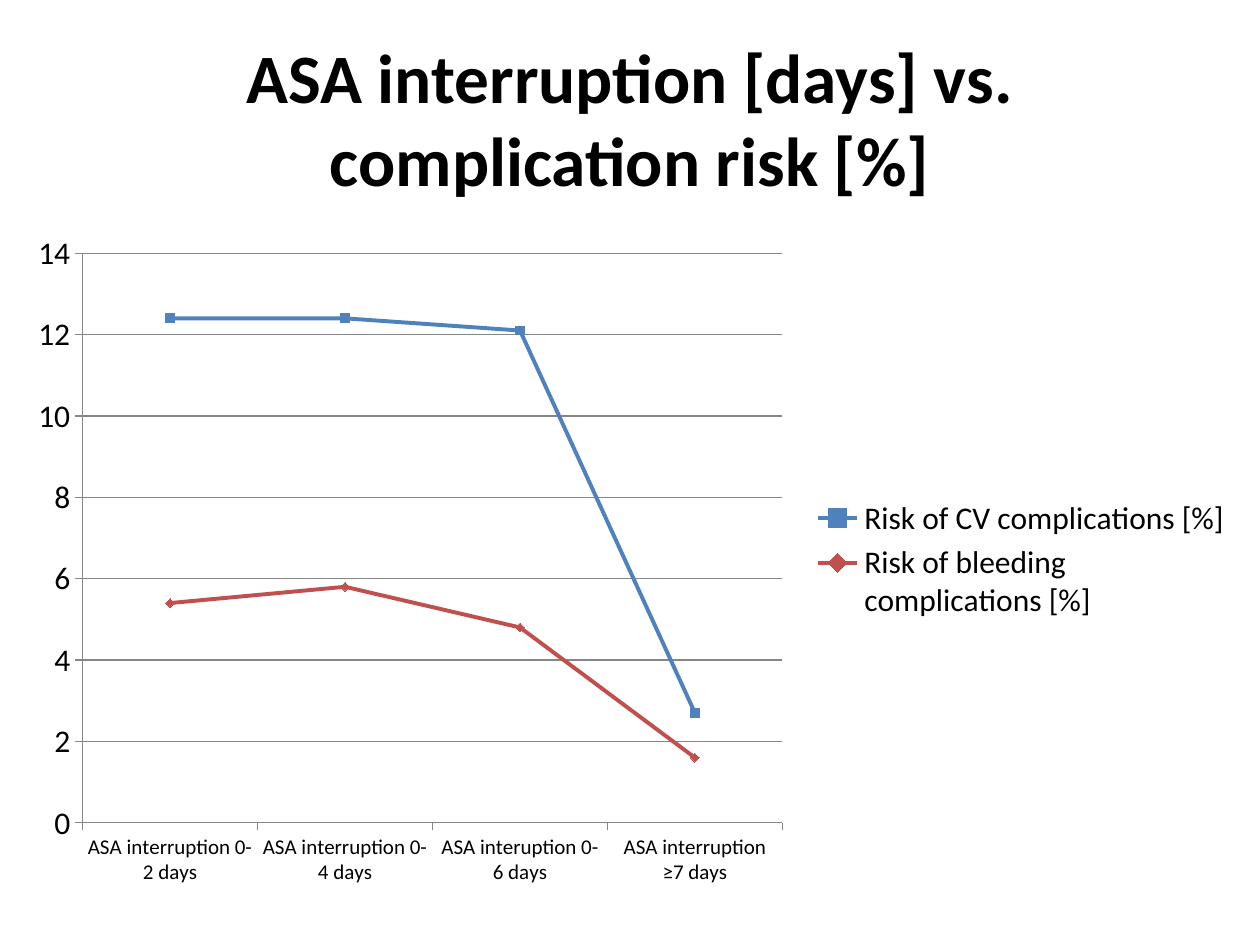
from dataclasses import dataclass

from lxml import etree
from pptx import Presentation
from pptx.chart.data import CategoryChartData
from pptx.dml.color import RGBColor
from pptx.enum.chart import (
    XL_CHART_TYPE,
    XL_LEGEND_POSITION,
    XL_MARKER_STYLE,
    XL_TICK_MARK,
)
from pptx.enum.text import MSO_ANCHOR, PP_ALIGN
from pptx.oxml.ns import qn
from pptx.util import Emu, Pt

LINE_MARKERS = XL_CHART_TYPE.LINE_MARKERS
LEGEND_RIGHT = XL_LEGEND_POSITION.RIGHT
SQUARE = XL_MARKER_STYLE.SQUARE
DIAMOND = XL_MARKER_STYLE.DIAMOND
TICK_OUTSIDE = XL_TICK_MARK.OUTSIDE
CENTER = PP_ALIGN.CENTER
MIDDLE = MSO_ANCHOR.MIDDLE
EMU_PER_PX = 914400 / 126
TITLE_ONLY = 5


@dataclass(frozen=True)
class Theme:
    """Fonts, type sizes, line weights and colours of the slide."""

    font: str = "Calibri"
    title_size: float = 39.6
    chart_size: int = 18
    category_size: int = 12
    series_weight: float = 2.25
    axis_weight: float = 0.75
    marker_size: int = 5
    text: RGBColor = RGBColor(0x00, 0x00, 0x00)
    axis: RGBColor = RGBColor(0x86, 0x86, 0x86)
    cardiovascular: RGBColor = RGBColor(0x4F, 0x81, 0xBD)
    bleeding: RGBColor = RGBColor(0xC0, 0x50, 0x4D)


THEME = Theme()
TITLE = "ASA interruption [days] vs. complication risk [%]"
TITLE_BOX = (63, 38, 1134, 158)
CHART_BOX = (15, 220, 1230, 679)
PLOT_BOX = (83, 253, 700, 570)
INTERRUPTIONS = (
    "ASA interruption 0-2 days",
    "ASA interruption 0-4 days",
    "ASA interuption 0-6 days",
    "ASA interruption ≥7 days",
)
RISKS = (
    ("Risk of CV complications [%]", (12.4, 12.4, 12.1, 2.7), THEME.cardiovascular, SQUARE),
    ("Risk of bleeding complications [%]", (5.4, 5.8, 4.8, 1.6), THEME.bleeding, DIAMOND),
)


def px(length):
    """Turn a length in px into EMU."""
    return Emu(round(length * EMU_PER_PX))


def style_font(font, size):
    """Apply the theme's typeface and text colour at a size."""
    font.name = THEME.font
    font.size = Pt(size)
    font.color.rgb = THEME.text


def style_line(line, color, weight):
    """Give a line its colour and weight."""
    line.color.rgb = color
    line.width = Pt(weight)


def fill_title(title):
    """Place and format the slide title."""
    title.left, title.top, title.width, title.height = map(px, TITLE_BOX)
    frame = title.text_frame
    frame.text = TITLE
    frame.word_wrap = True
    frame.vertical_anchor = MIDDLE
    paragraph = frame.paragraphs[0]
    paragraph.alignment = CENTER
    for run in paragraph.runs:
        style_font(run.font, THEME.title_size)
        run.font.bold = True


def place_plot(chart):
    """Fix the inner plot area within the chart frame."""
    left, top, width, height = CHART_BOX
    plot_left, plot_top, plot_width, plot_height = PLOT_BOX
    fractions = {
        "x": (plot_left - left) / width,
        "y": (plot_top - top) / height,
        "w": plot_width / width,
        "h": plot_height / height,
    }
    plot_area = chart.element.find(".//" + qn("c:plotArea"))
    for automatic in plot_area.findall(qn("c:layout")):
        plot_area.remove(automatic)
    layout = etree.Element(qn("c:layout"))
    plot_area.insert(0, layout)
    manual = etree.SubElement(layout, qn("c:manualLayout"))
    settings = {"layoutTarget": "inner", "xMode": "edge", "yMode": "edge"}
    settings.update({key: f"{value:.3f}" for key, value in fractions.items()})
    for key, value in settings.items():
        etree.SubElement(manual, qn(f"c:{key}"), val=value)


def style_axis(axis, size):
    """Format an axis line, its ticks and its labels."""
    axis.major_tick_mark = TICK_OUTSIDE
    style_line(axis.format.line, THEME.axis, THEME.axis_weight)
    style_font(axis.tick_labels.font, size)


def style_series(series, color, marker_style):
    """Format a risk curve and its markers."""
    series.smooth = False
    style_line(series.format.line, color, THEME.series_weight)
    marker = series.marker
    marker.style = marker_style
    marker.size = THEME.marker_size
    marker.format.fill.solid()
    marker.format.fill.fore_color.rgb = color
    marker.format.line.color.rgb = color


def add_risk_chart(slide):
    """Add the line chart of both complication risks."""
    risk_data = CategoryChartData()
    risk_data.categories = INTERRUPTIONS
    for name, values, _, _ in RISKS:
        risk_data.add_series(name, values)
    chart = slide.shapes.add_chart(LINE_MARKERS, *map(px, CHART_BOX), risk_data).chart
    chart.has_title = False
    style_font(chart.font, THEME.chart_size)
    place_plot(chart)
    chart.plots[0].vary_by_categories = False
    for series, (_, _, color, marker_style) in zip(chart.plots[0].series, RISKS):
        style_series(series, color, marker_style)

    style_axis(chart.category_axis, THEME.category_size)
    risk_axis = chart.value_axis
    style_axis(risk_axis, THEME.chart_size)
    risk_axis.minimum_scale, risk_axis.maximum_scale, risk_axis.major_unit = 0, 14, 2
    risk_axis.has_major_gridlines = True
    style_line(risk_axis.major_gridlines.format.line, THEME.axis, THEME.axis_weight)

    chart.has_legend = True
    chart.legend.position = LEGEND_RIGHT
    chart.legend.include_in_layout = False
    style_font(chart.legend.font, THEME.chart_size)


def main():
    """Build and save the slide."""
    presentation = Presentation()
    presentation.slide_width, presentation.slide_height = px(1260), px(945)
    slide = presentation.slides.add_slide(presentation.slide_layouts[TITLE_ONLY])
    fill_title(slide.shapes.title)
    add_risk_chart(slide)
    presentation.save("out.pptx")


if __name__ == "__main__":
    main()
